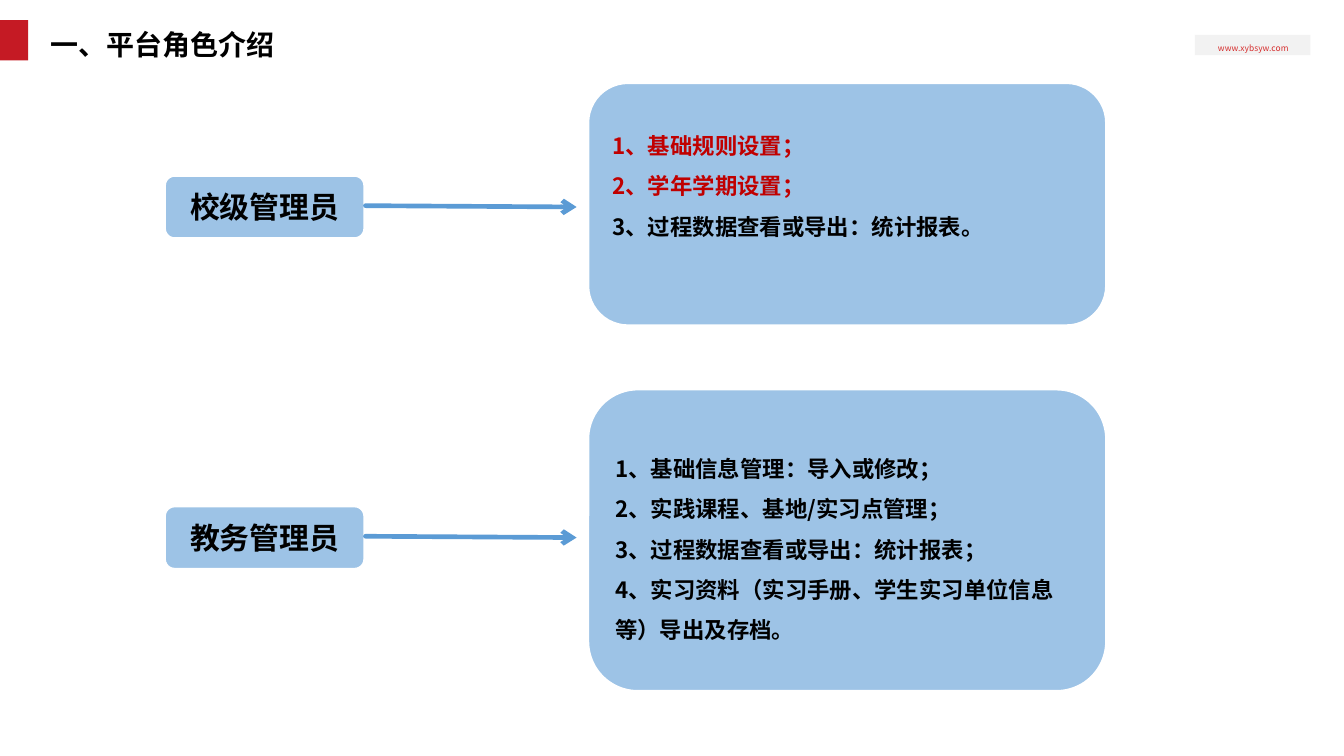
from pptx import Presentation
from pptx.dml.color import RGBColor
from pptx.enum import shapes, text
from pptx.oxml import ns
from pptx.util import Pt
from lxml import etree

FONT = "Noto Sans CJK SC"
BLACK, RED, SKY, BLUE = "000000", "C00000", "9DC3E6", "5B9BD5"
MID, TOP, LOW = (text.MSO_ANCHOR.MIDDLE, text.MSO_ANCHOR.TOP,
                 text.MSO_ANCHOR.BOTTOM)
LEFT, MIDDLE = text.PP_ALIGN.LEFT, text.PP_ALIGN.CENTER
RECT, ROUND = (shapes.MSO_SHAPE.RECTANGLE,
               shapes.MSO_SHAPE.ROUNDED_RECTANGLE)


def paint(fmt, color):
    fmt.solid()
    fmt.fore_color.rgb = RGBColor.from_string(color)


def write(shape, lines, size=12, color=BLACK, bold=True, align=LEFT,
          anchor=MID, pad=(7.2, 3.6), gap=None):
    """Fill a shape with lines; a line is a string or a (string, color) pair."""
    frame = shape.text_frame
    frame.word_wrap = True
    frame.vertical_anchor = anchor
    frame.margin_left = frame.margin_right = Pt(pad[0])
    frame.margin_top, frame.margin_bottom = Pt(pad[1]), Pt(3.6)
    for i, line in enumerate(lines):
        words, tint = (line, color) if isinstance(line, str) else line
        par = frame.add_paragraph() if i else frame.paragraphs[0]
        par.alignment = align
        if gap:
            par.line_spacing = gap
        run = par.add_run()
        run.text = words
        font = run.font
        font.name, font.size, font.bold = FONT, Pt(size), bold
        paint(font.fill, tint)
        east = etree.Element(ns.qn("a:ea"), typeface=FONT)
        font._element.find(ns.qn("a:latin")).addnext(east)


class Deck:
    def __init__(self, wide, high):
        self.show = Presentation()
        self.show.slide_width, self.show.slide_height = Pt(wide), Pt(high)
        self.slide = self.show.slides.add_slide(self.show.slide_layouts[6])

    def block(self, x, y, w, h, fill, kind=RECT, edge=None):
        shape = self.slide.shapes.add_shape(kind, Pt(x), Pt(y), Pt(w), Pt(h))
        shape.shadow.inherit = False
        paint(shape.fill, fill)
        if edge:
            paint(shape.line.fill, edge)
            shape.line.width = Pt(2.25)
        else:
            shape.line.fill.background()
        return shape

    def label(self, x, y, w, h, words, **look):
        box = self.slide.shapes.add_textbox(Pt(x), Pt(y), Pt(w), Pt(h))
        write(box, [words], **look)

    def arrow(self, x1, y1, x2, y2):
        line = self.slide.shapes.add_connector(
            shapes.MSO_CONNECTOR.STRAIGHT, Pt(x1), Pt(y1), Pt(x2), Pt(y2))
        paint(line.line.fill, BLUE)
        line.line.width = Pt(2.5)
        stroke = line.line._get_or_add_ln()
        stroke.set("cap", "rnd")
        etree.SubElement(stroke, ns.qn("a:tailEnd"), type="arrow")
        etree.SubElement(line._element.spPr, ns.qn("a:effectLst"))

    def role(self, y, name, top, high, pad, duties):
        """Draw a role, an arrow and the panel of its duties."""
        tag = self.block(87.8, y, 108, 34.6, SKY, ROUND, "FFFFFF")
        write(tag, [name], size=16, align=MIDDLE)
        self.arrow(195.8, y + 16.6, 308.9, y + 17.3)
        panel = self.block(314.6, top, 278.6, high, SKY, ROUND, "FFFFFF")
        write(panel, duties, anchor=TOP, pad=(7.2, pad), gap=Pt(21.6))


def main():
    deck = Deck(720, 405)
    deck.block(0, 10.8, 15.1, 21.6, "C51A24")
    deck.block(640.1, 18.7, 61.9, 10.8, "F2F2F2")
    deck.label(648, 19.4, 46.8, 13, "www.xybsyw.com", size=4.5,
               color="D62F2F", bold=False, align=MIDDLE, anchor=TOP,
               pad=(3.6, 3.6))
    deck.label(20.2, 5.8, 429.8, 31, "一、平台角色介绍", size=15,
               anchor=LOW, gap=0.9)
    deck.role(93.6, "校级管理员", 43.9, 131, 13.3, [
        ("1、基础规则设置；", RED),
        ("2、学年学期设置；", RED),
        "3、过程数据查看或导出：统计报表。",
    ])
    deck.role(270.7, "教务管理员", 208.1, 162.7, 20.6, [
        "1、基础信息管理：导入或修改；",
        "2、实践课程、基地/实习点管理；",
        "3、过程数据查看或导出：统计报表；",
        "4、实习资料（实习手册、学生实习单位信息等）导出及存档。",
    ])
    deck.show.save("out.pptx")


if __name__ == "__main__":
    main()
